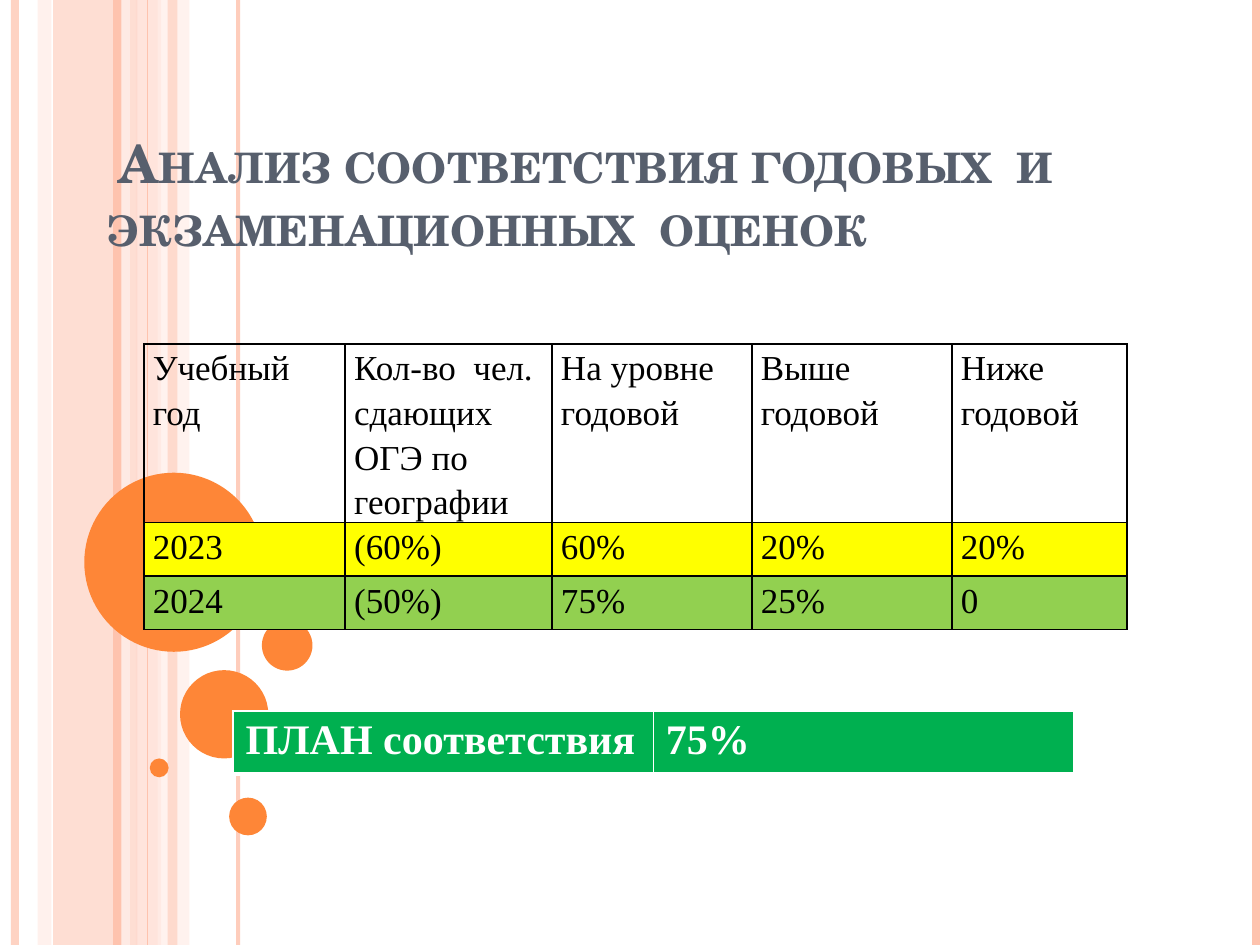
from lxml.etree import SubElement
from pptx import Presentation
from pptx.dml.color import RGBColor
from pptx.enum.shapes import MSO_CONNECTOR, MSO_SHAPE
from pptx.enum.text import MSO_ANCHOR, MSO_AUTO_SIZE, PP_ALIGN
from pptx.oxml import parse_xml
from pptx.oxml.ns import nsdecls, qn
from pptx.util import Cm, Pt

PEACH = RGBColor(0xFE, 0xC3, 0xAE)
LIGHT_PEACH = RGBColor(0xFF, 0xD9, 0xCE)
PALE_PEACH = RGBColor(0xFF, 0xED, 0xE8)
ORANGE = RGBColor(0xFE, 0x86, 0x37)
SLATE = RGBColor(0x57, 0x5F, 0x6D)
BLACK = RGBColor(0, 0, 0)
WHITE = RGBColor(0xFF, 0xFF, 0xFF)
YELLOW = RGBColor(0xFF, 0xFF, 0)
LIME = RGBColor(0x92, 0xD0, 0x50)
GREEN = RGBColor(0, 0xB0, 0x50)

WIDTH, HEIGHT = Cm(25.4), Cm(19.05)
TITLE = " Анализ соответствия годовых  и экзаменационных  оценок"
GRADES = [
    ("Учебный год", "Кол-во  чел. сдающих ОГЭ по географии",
     "На уровне годовой", "Выше  годовой", "Ниже годовой"),
    ("2023", "(60%)", "60%", "20%", "20%"),
    ("2024", "(50%)", "75%", "25%", "0"),
]
PLAN = [("ПЛАН соответствия", "75%")]

BANDS = [
    (1.07, 1.7, PEACH, 54),
    (0.76, 0.28, LIGHT_PEACH, 36),
    (2.74, 0.51, LIGHT_PEACH, 70),
    (3.18, 0.64, PALE_PEACH, 71),
]
STRIPES = [
    (0.3, 4.5, PEACH, 73),
    (2.54, 4.5, PALE_PEACH, 83),
    (2.36, 4.5, PEACH, 100),
    (4.8, 2.25, PEACH, 82),
    (2.97, 0.75, PEACH, 100),
    (25.32, 4.5, PEACH, 100),
]
FRONT_BAND = (3.38, 0.2, PEACH, 51)
CIRCLES = [
    (1.7, 9.53, 3.61),
    (3.63, 13.51, 1.78),
    (3.02, 15.29, 0.38),
    (4.62, 16.08, 0.76),
    (5.28, 12.5, 1.02),
]


def set_opacity(element, percent):
    color = next(element.iter(qn("a:srgbClr")))
    SubElement(color, qn("a:alpha")).set("val", str(percent * 1000))


def add_filled(shapes, kind, left, top, width, height, color):
    figure = shapes.add_shape(kind, left, top, width, height)
    figure.shadow.inherit = False
    figure.fill.solid()
    figure.fill.fore_color.rgb = color
    figure.line.fill.background()
    return figure


def add_band(shapes, left, width, color, opacity):
    band = add_filled(shapes, MSO_SHAPE.RECTANGLE, Cm(left), 0, Cm(width), HEIGHT, color)
    set_opacity(band.fill._xPr, opacity)


def add_stripe(shapes, x, weight, color, opacity):
    stripe = shapes.add_connector(MSO_CONNECTOR.STRAIGHT, Cm(x), 0, Cm(x), HEIGHT)
    stripe.line.width = Pt(weight)
    stripe.line.color.rgb = color
    properties = stripe._element.spPr
    SubElement(properties, qn("a:effectLst"))
    if opacity < 100:
        set_opacity(properties, opacity)


def set_borders(cell, color, weights):
    for position, (side, weight) in enumerate(zip("LRTB", weights)):
        border = parse_xml(
            f'<a:ln{side} {nsdecls("a")} w="{Pt(weight)}"><a:solidFill>'
            f'<a:srgbClr val="{color}"/></a:solidFill></a:ln{side}>')
        cell._tc.get_or_add_tcPr().insert(position, border)


def add_grid(shapes, content, left, top, widths, heights, fills, border, weights,
             size, color, bold=False, spacing=None, margins=None):
    grid = shapes.add_table(len(content), len(widths), Cm(left), Cm(top),
                            Cm(sum(widths)), Cm(sum(heights))).table
    grid.first_row = grid.horz_banding = False
    for column, width in zip(grid.columns, widths):
        column.width = Cm(width)
    for row, height, fill, texts in zip(grid.rows, heights, fills, content):
        row.height = Cm(height)
        for cell, text in zip(row.cells, texts):
            cell.text = text
            if fill is None:
                cell.fill.background()
            else:
                cell.fill.solid()
                cell.fill.fore_color.rgb = fill
            if margins:
                cell.margin_left = cell.margin_right = Cm(margins[0])
                cell.margin_top = cell.margin_bottom = Cm(margins[1])
            paragraph = cell.text_frame.paragraphs[0]
            paragraph.line_spacing = spacing
            paragraph.font.name = "Times New Roman"
            paragraph.font.size = Pt(size)
            paragraph.font.bold = bold
            paragraph.font.color.rgb = color
            set_borders(cell, border, weights)


def add_title(slide):
    title = slide.shapes.title
    title.left, title.top, title.width, title.height = Cm(1.9), Cm(1.32), Cm(21.6), Cm(3.99)
    frame = title.text_frame
    frame.text = TITLE
    frame.word_wrap = True
    frame.auto_size = MSO_AUTO_SIZE.NONE
    frame.vertical_anchor = MSO_ANCHOR.BOTTOM
    paragraph = frame.paragraphs[0]
    paragraph.alignment = PP_ALIGN.LEFT
    paragraph.font.name = "TeX Gyre Schola"
    paragraph.font.size = Pt(30)
    paragraph.font.bold = True
    paragraph.font.color.rgb = SLATE
    paragraph.runs[0]._r.get_or_add_rPr().set("cap", "small")
    slide.shapes._spTree.append(title._element)


def main():
    deck = Presentation()
    deck.slide_width, deck.slide_height = WIDTH, HEIGHT
    slide = deck.slides.add_slide(deck.slide_layouts[0])
    subtitle = slide.placeholders[1]._element
    subtitle.getparent().remove(subtitle)
    shapes = slide.shapes

    for band in BANDS:
        add_band(shapes, *band)
    for stripe in STRIPES:
        add_stripe(shapes, *stripe)
    add_band(shapes, *FRONT_BAND)
    for left, top, diameter in CIRCLES:
        add_filled(shapes, MSO_SHAPE.OVAL, Cm(left), Cm(top),
                   Cm(diameter), Cm(diameter), ORANGE)

    add_title(slide)
    add_grid(shapes, GRADES, 2.9, 6.93, [4.06, 4.17, 4.03, 4.03, 3.53],
             [3.6, 1.08, 1.08], [None, YELLOW, LIME], BLACK, (1, 1, 1, 1),
             20, BLACK, spacing=1.15, margins=(0.18, 0))
    add_grid(shapes, PLAN, 4.7, 14.33, [8.47, 8.47], [1.27], [GREEN],
             WHITE, (1, 1, 1, 3), 24, WHITE, bold=True)
    deck.save("out.pptx")


if __name__ == "__main__":
    main()
